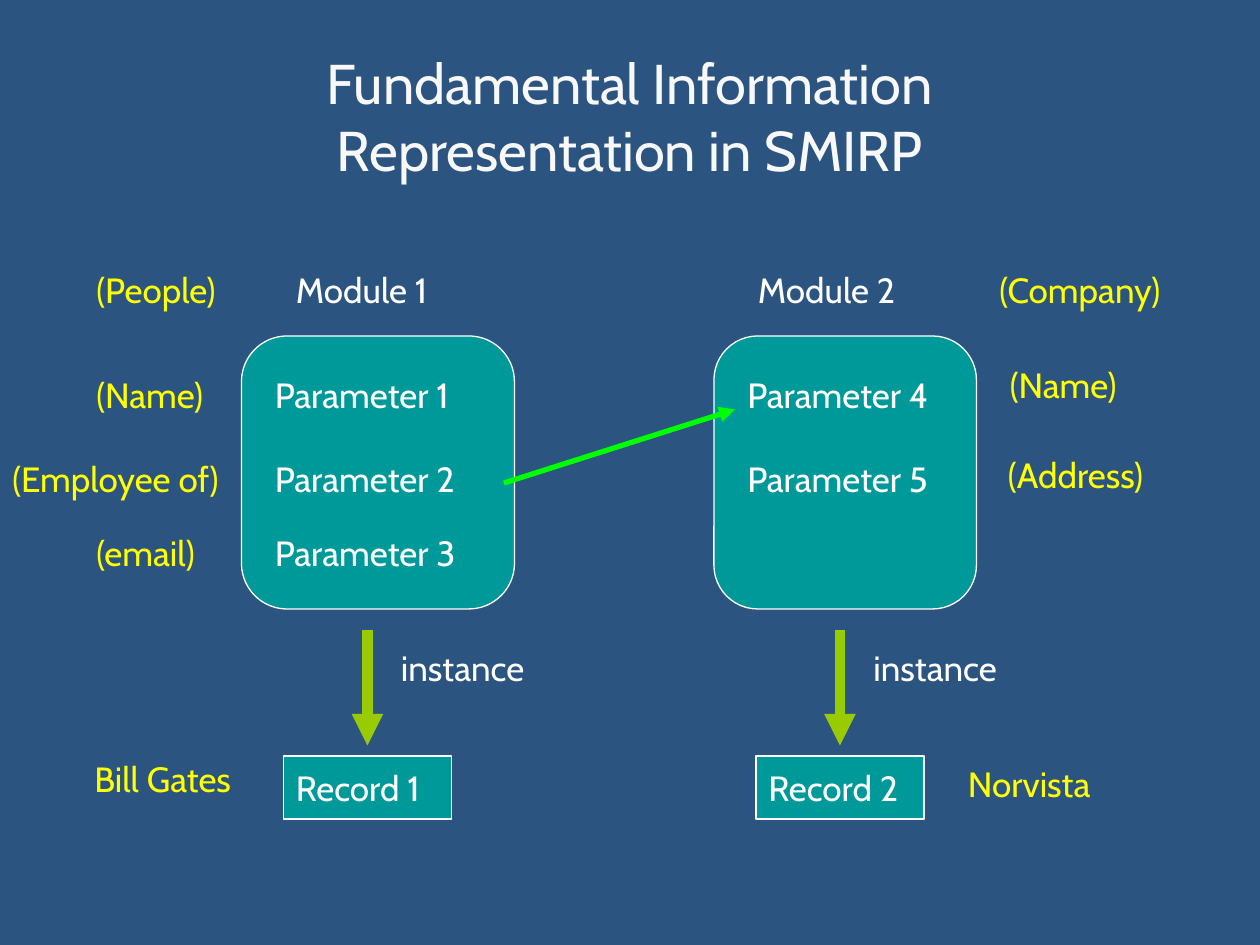
from pptx import Presentation
from pptx.dml.color import RGBColor
from pptx.enum.shapes import MSO_CONNECTOR as Conn, MSO_SHAPE as Kind
from pptx.enum.text import MSO_ANCHOR as Anchor, MSO_AUTO_SIZE as Fit, PP_ALIGN as Align
from pptx.oxml.ns import qn
from pptx.util import Pt
from lxml.etree import SubElement as Sub

FONT = "Cabin"
WHITE, YELLOW, TEAL = "FFFFFF", "FFFF00", "009999"
GREEN, LIME = "00FF00", "99CC00"
SHIFT = 270  # distance between the two module columns


def color(code):
    return RGBColor.from_string(code)


def style(frame, text, code, size=20, align=Align.LEFT):
    frame.text = text
    para = frame.paragraphs[0]
    para.alignment = align
    font = para.runs[0].font
    font.name, font.size = FONT, Pt(size)
    font.color.rgb = color(code)


def title(slide, text):
    head = slide.shapes.title
    head.left, head.top, head.width, head.height = Pt(96), Pt(48), Pt(528), Pt(36)
    style(head.text_frame, text, "F8F8F8", 32, Align.CENTER)
    head.text_frame.vertical_anchor = Anchor.MIDDLE
    head.text_frame.auto_size = Fit.NONE


def label(slide, text, x, y, w, h=36, code=WHITE, wrap=False):
    frame = slide.shapes.add_textbox(Pt(x), Pt(y), Pt(w), Pt(h)).text_frame
    style(frame, text, code)
    frame.word_wrap = wrap
    frame.auto_size = Fit.SHAPE_TO_FIT_TEXT


def box(slide, kind, x, y, w, h):
    shape = slide.shapes.add_shape(kind, Pt(x), Pt(y), Pt(w), Pt(h))
    shape.shadow.inherit = False
    shape.fill.solid()
    shape.fill.fore_color.rgb = color(TEAL)
    shape.line.color.rgb = color(WHITE)
    shape.line.width = Pt(0.75)
    return shape


def arrow(slide, x1, y1, x2, y2, code, width):
    link = slide.shapes.add_connector(Conn.STRAIGHT, Pt(x1), Pt(y1), Pt(x2), Pt(y2))
    link.line.color.rgb = color(code)
    link.line.width = Pt(width)
    Sub(link.line._get_or_add_ln(), qn("a:tailEnd"), type="triangle")
    Sub(link._element.spPr, qn("a:effectLst"))


def module(slide, num, width, name_x, params):
    dx = (num - 1) * SHIFT
    # Module with its parameters
    card = box(slide, Kind.ROUNDED_RECTANGLE, 138 + dx, 192, width, 156)
    card.adjustments[0] = 0.167
    label(slide, f"Module {num}", name_x, 150, 107)
    for param, y in zip(params, (210, 258, 300)):
        label(slide, f"Parameter {param}", 150 + dx, y, 130)
    # Instance arrow down to the record
    arrow(slide, 210 + dx, 360, 210 + dx, 426, LIME, 6)
    label(slide, "instance", 222 + dx, 366, 93)
    record = box(slide, Kind.RECTANGLE, 162 + dx, 432, 96, 36)
    style(record.text_frame, f"Record {num}", WHITE)
    record.text_frame.word_wrap = False
    record.text_frame.vertical_anchor = Anchor.MIDDLE


def main():
    deck = Presentation()
    deck.slide_width, deck.slide_height = Pt(720), Pt(540)
    slide = deck.slides.add_slide(deck.slide_layouts[5])
    slide.background.fill.solid()
    slide.background.fill.fore_color.rgb = color("2B5481")
    title(slide, "Fundamental Information Representation in SMIRP")

    module(slide, 1, 156, 162, (1, 2, 3))
    module(slide, 2, 150, 426, (4, 5))

    # Link between parameters
    arrow(slide, 288, 276, 420, 234, GREEN, 3)

    # Examples beside the modules
    notes = [
        ("(People)", 48, 150, 88.5),
        ("(Name)", 48, 210, 81),
        ("(email)", 48, 300, 78),
        ("Bill Gates", 46.8, 429.2, 97),
        ("(Company)", 564, 150, 113),
        ("(Name)", 570, 204, 81),
        ("(Address)", 568.8, 255.4, 100),
        ("Norvista", 546, 432, 120),
    ]
    for text, x, y, w in notes:
        label(slide, text, x, y, w, 31.5, YELLOW)
    label(slide, "(Employee of)", 0, 258, 144, 31.5, YELLOW, True)

    deck.save("out.pptx")


if __name__ == "__main__":
    main()
